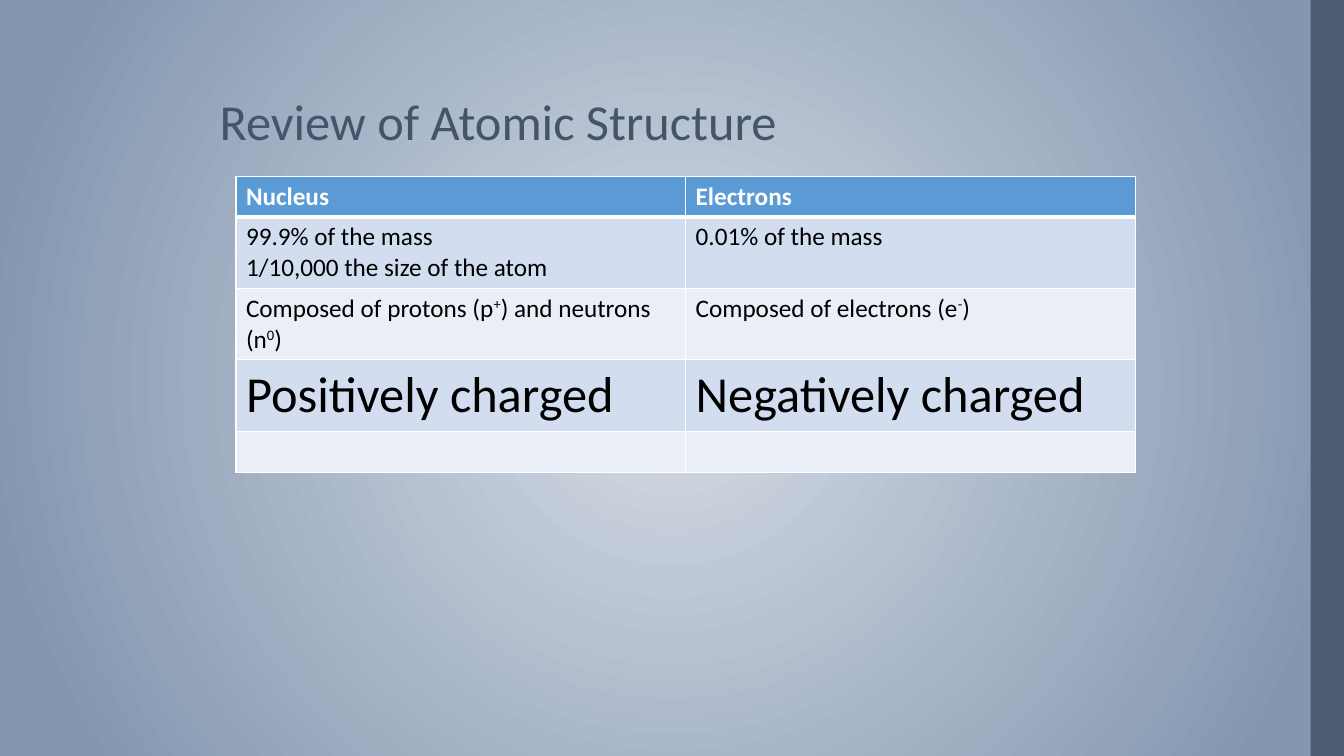
from lxml import etree
from pptx import Presentation
from pptx.dml.color import RGBColor
from pptx.enum.shapes import MSO_SHAPE
from pptx.enum.text import MSO_ANCHOR
from pptx.oxml import parse_xml
from pptx.oxml.ns import nsdecls, qn
from pptx.util import Inches, Pt

SLATE = RGBColor(0x44, 0x54, 0x6A)
BLUE = RGBColor(0x5B, 0x9B, 0xD5)
BAND_DARK = RGBColor(0xD2, 0xDE, 0xEF)
BAND_LIGHT = RGBColor(0xEA, 0xEF, 0xF7)
WHITE = RGBColor(0xFF, 0xFF, 0xFF)
BLACK = RGBColor(0, 0, 0)


def set_font(paragraph, size, color, bold=False):
    font = paragraph.font
    font.name = "Calibri"
    font.size = Pt(size)
    font.bold = bold
    font.color.rgb = color


def set_borders(cell, bottom_width):
    properties = cell._tc.get_or_add_tcPr()
    widths = {"L": 1, "R": 1, "T": 1, "B": bottom_width}
    for position, (side, width) in enumerate(widths.items()):
        properties.insert(position, parse_xml(
            f'<a:ln{side} {nsdecls("a")} w="{Pt(width)}"><a:solidFill>'
            f'<a:srgbClr val="{WHITE}"/></a:solidFill></a:ln{side}>'))


prs = Presentation()
prs.slide_width = Inches(13.33)
prs.slide_height = Inches(7.5)
slide = prs.slides.add_slide(prs.slide_layouts[6])

backdrop = slide.background.fill
backdrop.solid()
solid = slide._element.find(".//" + qn("p:bgPr")).find(qn("a:solidFill"))
solid.getparent().replace(solid, parse_xml(
    f'<a:gradFill {nsdecls("a")} rotWithShape="1"><a:gsLst>'
    '<a:gs pos="0"><a:srgbClr val="D6DCE5"/></a:gs>'
    '<a:gs pos="90000"><a:srgbClr val="8497B0"/></a:gs></a:gsLst>'
    '<a:path path="circle"><a:fillToRect l="50000" t="50000" r="50000" b="50000"/>'
    '</a:path></a:gradFill>'))

side_bar = slide.shapes.add_shape(
    MSO_SHAPE.RECTANGLE, Inches(13), 0, Inches(0.33), Inches(7.5))
side_bar.shadow.inherit = False
side_bar.fill.solid()
side_bar.fill.fore_color.rgb = SLATE
side_bar.line.fill.background()
bar_color = side_bar._element.spPr.find(qn("a:solidFill"))[0]
etree.SubElement(bar_color, qn("a:alpha"), val="87000")

title = slide.shapes.add_textbox(
    Inches(2.08), Inches(0.19), Inches(10.36), Inches(1.36)).text_frame
title.word_wrap = True
title.vertical_anchor = MSO_ANCHOR.BOTTOM
heading = title.paragraphs[0]
heading.text = "Review of Atomic Structure"
heading.line_spacing = 0.9
set_font(heading, 36, SLATE)

# Text between carets is superscript.
ROWS = [
    (0.4, 18, ["Nucleus", "Electrons"]),
    (0.71, 18, ["99.9% of the mass\n1/10,000 the size of the atom", "0.01% of the mass"]),
    (0.71, 18, ["Composed of protons (p^+^) and neutrons (n^0^)",
                "Composed of electrons (e^-^)"]),
    (0.71, 36, ["Positively charged", "Negatively charged"]),
    (0.41, 18, ["", ""]),
]
comparison = slide.shapes.add_table(
    len(ROWS), 2, Inches(2.34), Inches(1.75), Inches(8.92), Inches(2.94)).table

for row, (height, size, texts) in enumerate(ROWS):
    comparison.rows[row].height = Inches(height)
    is_header = row == 0
    for column, text in enumerate(texts):
        cell = comparison.cell(row, column)
        cell.fill.solid()
        cell.fill.fore_color.rgb = (
            BLUE if is_header else BAND_DARK if row % 2 else BAND_LIGHT)
        set_borders(cell, 3 if is_header else 1)
        frame = cell.text_frame
        for index, line in enumerate(text.split("\n")):
            paragraph = frame.add_paragraph() if index else frame.paragraphs[0]
            for part, piece in enumerate(line.split("^") if line else []):
                run = paragraph.add_run()
                run.text = piece
                if part % 2:
                    run.font._element.set("baseline", "30000")
            set_font(paragraph, size, WHITE if is_header else BLACK, is_header)

prs.save("out.pptx")
